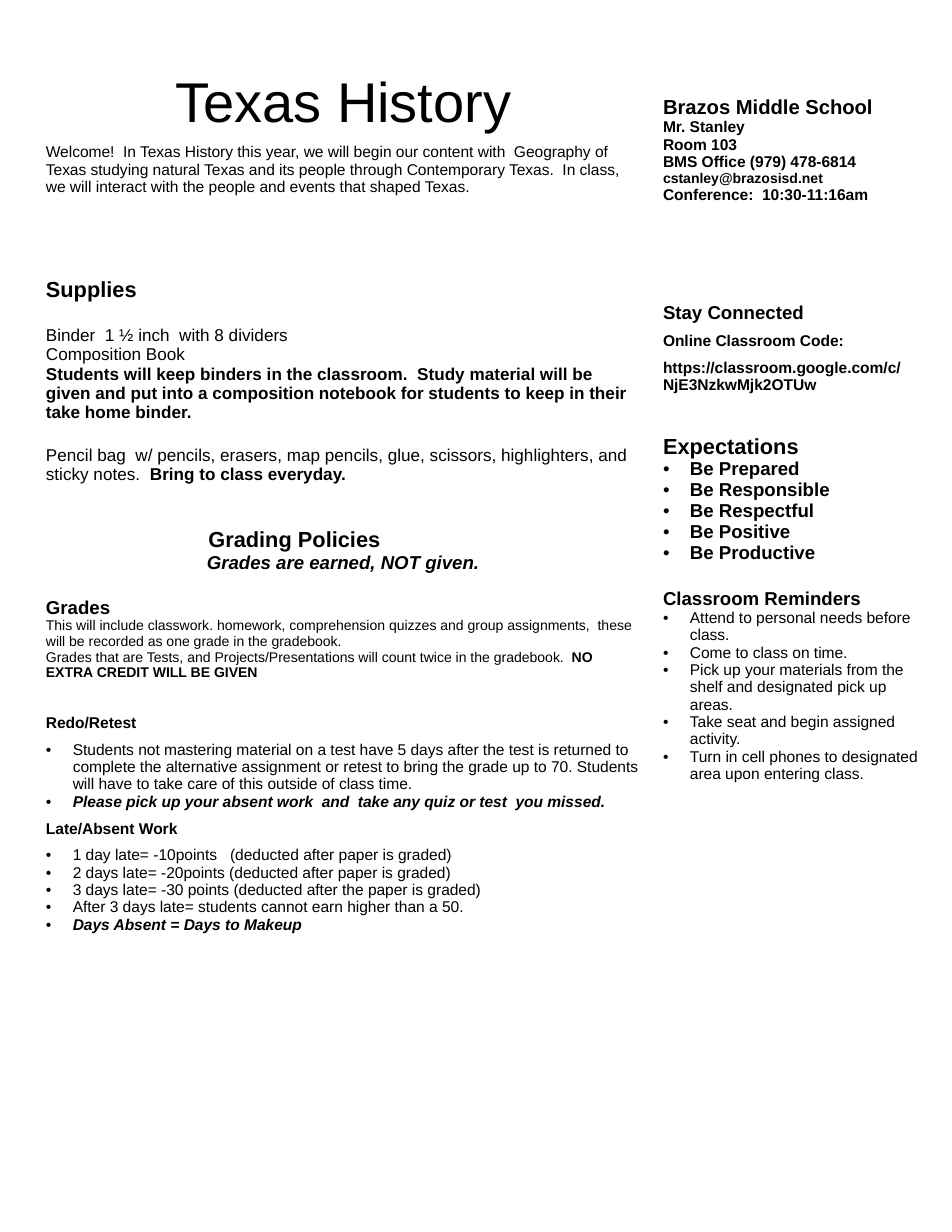
import pptx
import pptx.util
import pptx.dml.color
import pptx.enum.text
import pptx.oxml

Inches = pptx.util.Inches
Pt = pptx.util.Pt
BLACK = pptx.dml.color.RGBColor(0, 0, 0)
WHITE = pptx.dml.color.RGBColor(255, 255, 255)
FONT = "Arial"
SLIDE_SIZE = (8.5, 11)
TABLE_LEFT, TABLE_TOP = 0.31, 0.11
COLUMNS = (5.51, 2.54)
ROWS = (2.15, 6.99, 1.6)
MARGIN = 0.1
BULLET_INDENT = 0.24
HEADING_INDENT = 1.45
LINE = 15.6


def line(text, size, style="", kind="plain", before=0, after=0):
    return kind, before, after, [(text, size, style)]


def bullets(texts, size, style="", before=0):
    return [line(text, size, style, "bullet", 0 if index else before)
            for index, text in enumerate(texts)]


WELCOME = [
    line("Texas History", 36, kind="center", after=6),
    line("Welcome!  In Texas History this year, we will begin our content with  Geography of Texas "
         "studying natural Texas and its people through Contemporary Texas.  In class, we will "
         "interact with the people and events that shaped Texas.", 10),
]
CONTACT = [
    line("Brazos Middle School", 13, "b"),
    line("Mr. Stanley", 10, "b"),
    line("Room 103", 10, "b"),
    line("BMS Office (979) 478-6814", 10, "b"),
    line("cstanley@brazosisd.net", 9, "b"),
    line("Conference:  10:30-11:16am", 10, "b"),
]
POLICIES = [
    line("Supplies", 14, "b"),
    line("Binder  1 ½ inch  with 8 dividers", 11, before=LINE),
    line("Composition Book", 11),
    line("Students will keep binders in the classroom.  Study material will be given and put into "
         "a composition notebook for students to keep in their take home binder.", 11, "b"),
    ("plain", LINE, 0, [
        ("Pencil bag  w/ pencils, erasers, map pencils, glue, scissors, highlighters, "
         "and  sticky notes.  ", 11, ""),
        ("Bring to class everyday.", 11, "b")]),
    line("Grading Policies", 14, "b", "indented", before=28),
    line("Grades are earned, NOT given.", 12, "bi", "center"),
    line("Grades", 12, "b", before=LINE),
    line("This will include classwork. homework, comprehension quizzes and group assignments,  "
         "these will be recorded as one grade in the gradebook.", 9),
    ("plain", 0, 0, [
        ("Grades that are Tests, and Projects/Presentations will count twice in the gradebook.  ",
         9, ""),
        ("NO EXTRA CREDIT WILL BE GIVEN", 9, "b")]),
    line("Redo/Retest", 10, "b", before=LINE + 6),
    *bullets(["Students not mastering material on a test have 5 days after the test is returned to "
              "complete the alternative assignment or retest to bring the grade up to 70. Students "
              "will have to take care of this outside of class time."], 10, before=6),
    *bullets(["Please pick up your absent work  and  take any quiz or test  you missed."], 10, "bi"),
    line("Late/Absent Work", 10, "b", before=6),
    *bullets(["1 day late= -10points   (deducted after paper is graded)",
              "2 days late= -20points (deducted after paper is graded)",
              "3 days late= -30 points (deducted after the paper is graded)",
              "After 3 days late= students cannot earn higher than a 50."], 10, before=6),
    *bullets(["Days Absent = Days to Makeup"], 10, "bi"),
]
SIDEBAR = [
    line("Stay Connected", 12, "b"),
    line("Online Classroom Code:", 10, "b", before=6),
    line("https://classroom.google.com/c/NjE3NzkwMjk2OTUw", 10, "b", before=6),
    line("Expectations", 14, "b", before=26),
    *bullets(["Be Prepared", "Be Responsible", "Be Respectful", "Be Positive", "Be Productive"],
             12, "b"),
    line("Classroom Reminders", 12, "b", before=16),
    *bullets(["Attend to personal needs before class.",
              "Come to class on time.",
              "Pick up your materials from the shelf and designated pick up areas.",
              "Take seat and begin assigned activity.",
              "Turn in cell phones to designated area upon entering class."], 10),
]
CELLS = [(0, 0, 0.53, WELCOME), (0, 1, 0.75, CONTACT),
         (1, 0, 0.22, POLICIES), (1, 1, 0.44, SIDEBAR)]


def add_xml(parent, tag, content="", attributes=""):
    parent.append(pptx.oxml.parse_xml(
        f'<a:{tag} xmlns:a="http://schemas.openxmlformats.org/drawingml/2006/main" {attributes}>'
        f'{content}</a:{tag}>'))


def style_cell(cell):
    cell.margin_left = cell.margin_right = cell.margin_bottom = Inches(MARGIN)
    properties = cell._tc.get_or_add_tcPr()
    for side in ("lnL", "lnR", "lnT", "lnB"):
        add_xml(properties, side,
                f'<a:solidFill><a:srgbClr val="{str(WHITE)}"/></a:solidFill>',
                f'w="{int(Pt(0.75))}"')
    cell.fill.background()


def format_paragraph(paragraph, kind, before, after):
    paragraph.space_before = Pt(before)
    paragraph.space_after = Pt(after)
    paragraph.alignment = (pptx.enum.text.PP_ALIGN.CENTER if kind == "center"
                           else pptx.enum.text.PP_ALIGN.LEFT)
    properties = paragraph._p.get_or_add_pPr()
    if kind == "indented":
        properties.set("marL", str(int(Inches(HEADING_INDENT))))
    if kind == "bullet":
        properties.set("marL", str(int(Inches(BULLET_INDENT))))
        properties.set("indent", str(-int(Inches(BULLET_INDENT))))
        add_xml(properties, "buClr", f'<a:srgbClr val="{str(BLACK)}"/>')
        add_xml(properties, "buFont", attributes=f'typeface="{FONT}"')
        add_xml(properties, "buChar", attributes='char="•"')


def fill_text(text_frame, lines):
    for index, (kind, before, after, runs) in enumerate(lines):
        paragraph = text_frame.add_paragraph() if index else text_frame.paragraphs[0]
        format_paragraph(paragraph, kind, before, after)
        for text, size, style in runs:
            run = paragraph.add_run()
            run.text = text
            run.font.name = FONT
            run.font.size = Pt(size)
            run.font.bold = "b" in style
            run.font.italic = "i" in style
            run.font.color.rgb = BLACK


def main():
    presentation = pptx.Presentation()
    presentation.slide_width, presentation.slide_height = map(Inches, SLIDE_SIZE)
    slide = presentation.slides.add_slide(presentation.slide_layouts[6])
    table = slide.shapes.add_table(
        len(ROWS), len(COLUMNS), Inches(TABLE_LEFT), Inches(TABLE_TOP),
        Inches(sum(COLUMNS)), Inches(sum(ROWS))).table
    table.first_row = table.horz_banding = False
    for column, width in zip(table.columns, COLUMNS):
        column.width = Inches(width)
    for row, height in zip(table.rows, ROWS):
        row.height = Inches(height)
    for cell in table.iter_cells():
        style_cell(cell)
    for row, column, top, lines in CELLS:
        cell = table.cell(row, column)
        cell.margin_top = Inches(top)
        fill_text(cell.text_frame, lines)
    presentation.save("out.pptx")


if __name__ == "__main__":
    main()
